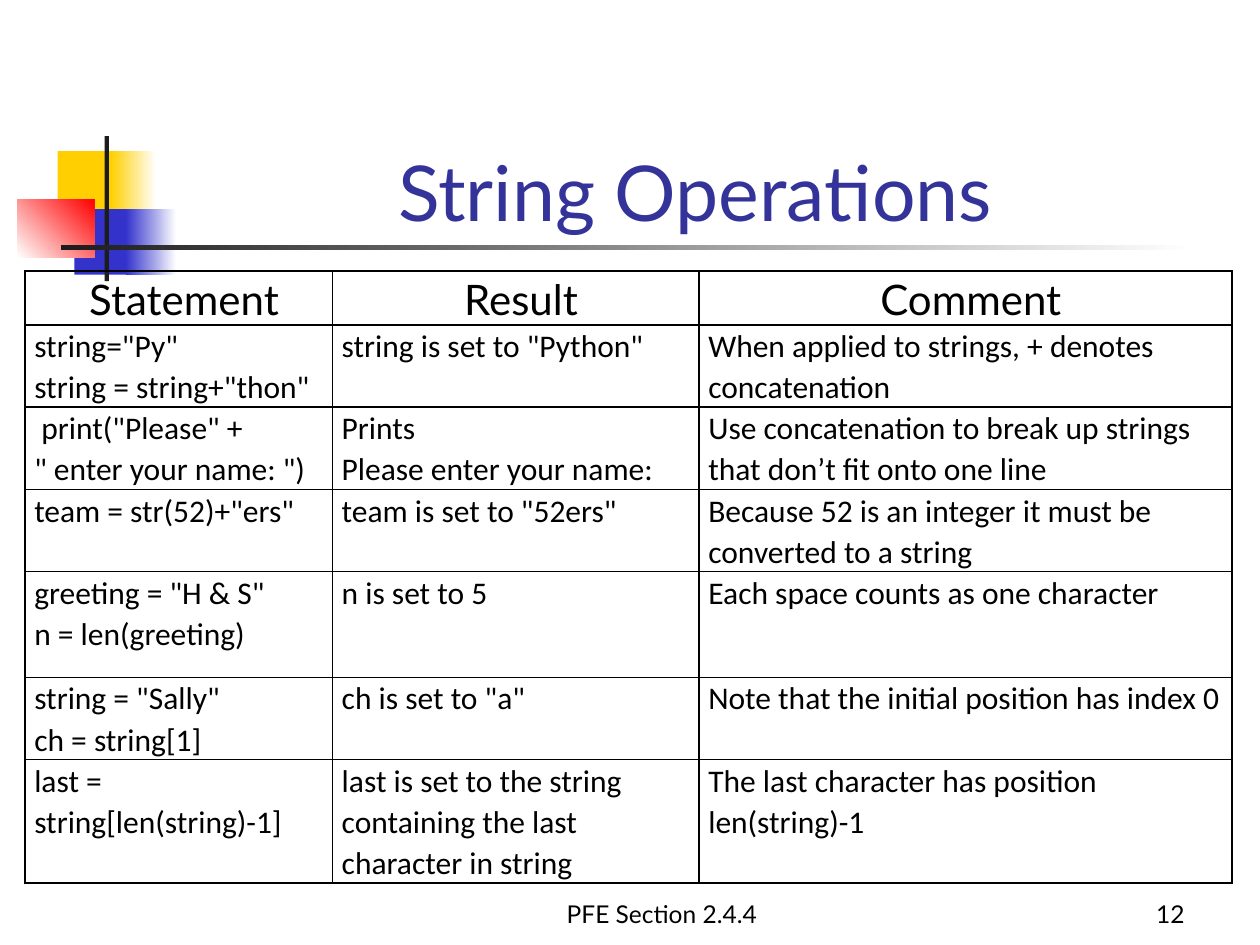
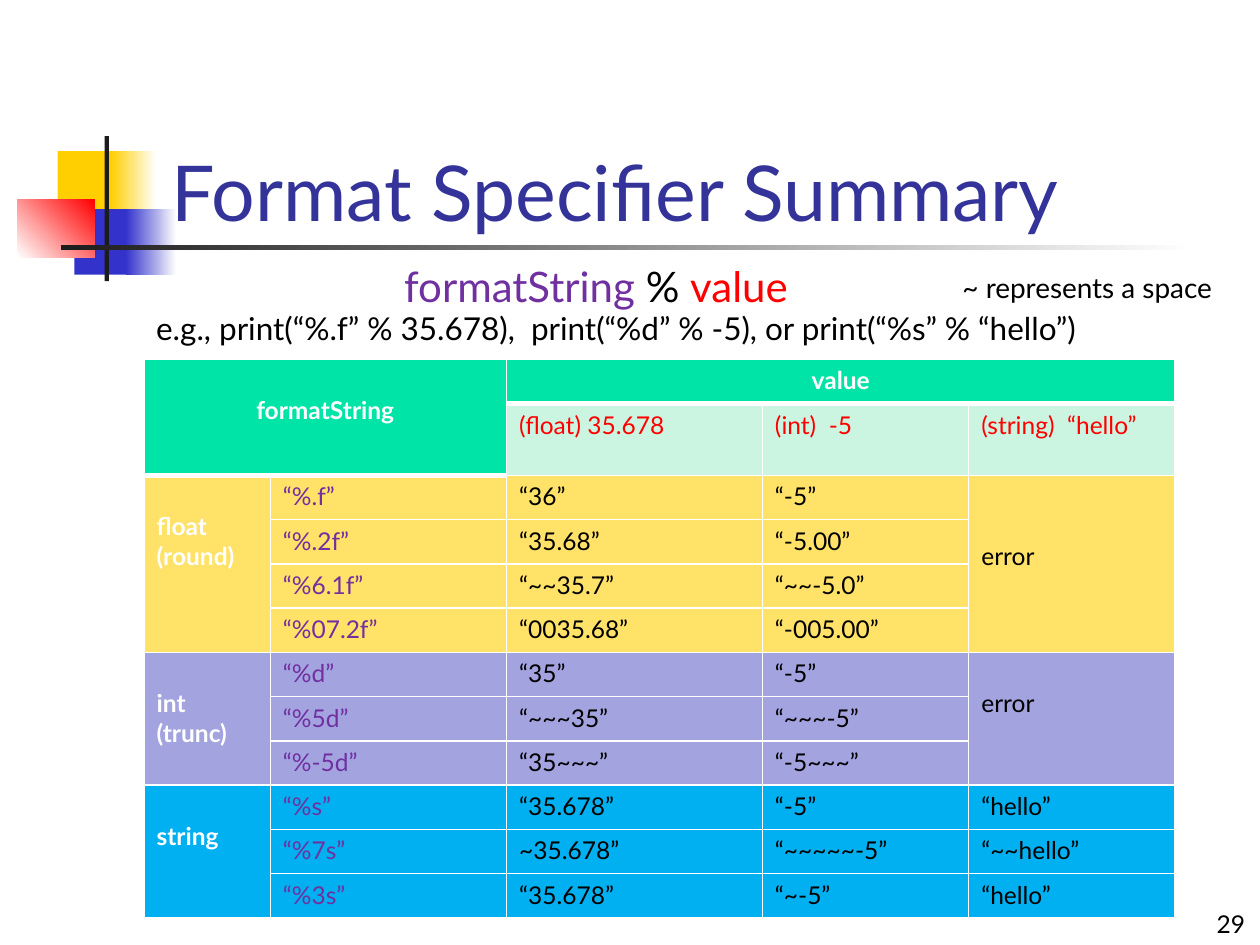
"""Build two slides on string operations and format specifiers."""
from lxml.etree import SubElement
from pptx import Presentation
from pptx.dml.color import RGBColor as Rgb
from pptx.enum.shapes import MSO_SHAPE as Shape
from pptx.enum.text import MSO_ANCHOR as Anchor, MSO_AUTO_SIZE as AutoSize, PP_ALIGN as Align
from pptx.oxml.ns import qn
from pptx.util import Pt

COLORS = {
    "title": "333399", "text": "000000", "white": "FFFFFF", "bar": "1C1C1C",
    "yellow": "FFCF01", "blue": "3333CC", "red": "FF0000", "purple": "7030A0",
    "header": "00E4A8", "subheader": "CCF5E1",
    "float": "FFE267", "int": "A3A3E0", "string": "00B0F0",
}
LATO, CALIBRI = "Lato", "Calibri"
LINE = 17

DECORATION = [
    (33, 86.4, 34.6, 37.4, ["yellow"], 0),
    (63.4, 86.4, 25.9, 37.4, ["yellow", "white"], 0),
    (42.5, 119.5, 33.1, 37.4, ["blue"], 0),
    (72, 119.5, 28.8, 37.4, ["blue", "white"], 0),
    (10, 113.8, 44, 33.1, ["white", "red"], 45),
    (59.8, 77.8, 2.4, 82.8, ["bar"], 0),
    (34.6, 140.2, 648, 2.5, ["bar", "white"], 0),
]

OPERATIONS = [
    (" Statement", " Result", " Comment"),
    ('string="Py"\nstring = string+"thon"', 'string is set to "Python"',
     "When applied to strings, + denotes concatenation"),
    (' print("Please" +\n" enter your name: ")', "Prints\nPlease enter your name:",
     "Use concatenation to break up strings that don’t fit onto one line"),
    ('team = str(52)+"ers"', 'team is set to "52ers"',
     "Because 52 is an integer it must be converted to a string"),
    ('greeting = "H & S"\nn = len(greeting)', "n is set to 5",
     "Each space counts as one character"),
    ('string = "Sally"\nch = string[1]', 'ch is set to "a"',
     "Note that the initial position has index 0"),
    ("last = string[len(string)-1]",
     "last is set to the string containing the last character in string",
     "The last character has position len(string)-1"),
]
OPERATION_WIDTHS = [175.7, 209.5, 304.6]
OPERATION_HEIGHTS = [30.8, 47, 47, 47, 60.4, 47, 70.5]

ARGUMENTS = ["(float) 35.678", "(int)  -5", "(string)  “hello”"]
SPECIFIERS = [
    ("float", "float\n(round)", 2, [
        ("“%.f”", "“36”", "“-5”"),
        ("“%.2f”", "“35.68”", "“-5.00”"),
        ("“%6.1f”", "“~~35.7”", "“~~-5.0”"),
        ("“%07.2f”", "“0035.68”", "“-005.00”")]),
    ("int", "int\n(trunc)", 1, [
        ("“%d”", "“35”", "“-5”"),
        ("“%5d”", "“~~~35”", "“~~~-5”"),
        ("“%-5d”", "“35~~~”", "“-5~~~”")]),
    ("string", "string", 0, [
        ("“%s”", "“35.678”", "“-5”", "“hello”"),
        ("“%7s”", "~35.678”", "“~~~~~-5”", "“~~hello”"),
        ("“%3s”", "“35.678”", "“~-5”", "“hello”")]),
]
SPECIFIER_WIDTHS = [72.2, 135, 146.2, 117.9, 117.9]
SPECIFIER_HEIGHTS = [25.3, 40.8] + [25.3] * 10


def rgb(name):
    return Rgb.from_string(COLORS[name])


def style(font, size, color="text", bold=False, face=LATO):
    font.size, font.name, font.bold = Pt(size), face, bold
    font.color.rgb = rgb(color)


def write(frame, text, size, color="text", align=Align.LEFT, bold=False, face=LATO, spacing=1):
    frame.text = text
    for paragraph in frame.paragraphs:
        paragraph.alignment, paragraph.line_spacing = align, spacing
        for font in [paragraph.font] + [run.font for run in paragraph.runs]:
            style(font, size, color, bold, face)


def place(item, left, top, width, height):
    item.left, item.top, item.width, item.height = map(Pt, (left, top, width, height))


def add_decoration(slide):
    for left, top, width, height, colors, angle in DECORATION:
        block = slide.shapes.add_shape(
            Shape.RECTANGLE, Pt(left), Pt(top), Pt(width), Pt(height))
        block.shadow.inherit = False
        block.line.fill.background()
        if len(colors) == 1:
            block.fill.solid()
            block.fill.fore_color.rgb = rgb(colors[0])
            continue
        block.fill.gradient()
        block.fill.gradient_angle = angle
        for stop, color in zip(block.fill.gradient_stops, colors):
            stop.color.rgb = rgb(color)


def add_titled_slide(deck, title, align):
    slide = deck.slides.add_slide(deck.slide_layouts[5])
    add_decoration(slide)
    heading = slide.shapes.title
    place(heading, 90.7, 49, 613.4, 90)
    frame = heading.text_frame
    frame.auto_size, frame.vertical_anchor = AutoSize.NONE, Anchor.BOTTOM
    write(frame, title, 44, "title", align)
    return slide


def add_footer(slide, text, left, top, width, align):
    footer = slide.shapes.add_textbox(Pt(left), Pt(top), Pt(width), Pt(36)).text_frame
    footer.word_wrap, footer.vertical_anchor = True, Anchor.BOTTOM
    write(footer, text, 14, align=align)


def add_label(slide, text, left, top, width, height, size):
    label = slide.shapes.add_textbox(Pt(left), Pt(top), Pt(width), Pt(height)).text_frame
    label.word_wrap, label.auto_size = False, AutoSize.SHAPE_TO_FIT_TEXT
    write(label, text, size)
    return label


def add_grid(slide, left, top, widths, heights):
    frame = slide.shapes.add_table(
        len(heights), len(widths), Pt(left), Pt(top), Pt(sum(widths)), Pt(sum(heights)))
    grid = frame.table
    grid.first_row = grid.horz_banding = False
    for column, width in zip(grid.columns, widths):
        column.width = Pt(width)
    for row, height in zip(grid.rows, heights):
        row.height = Pt(height)
    return grid


def set_borders(cell, color, bottom=1):
    properties = cell._tc.get_or_add_tcPr()
    for side, width in (("L", 1), ("R", 1), ("T", 1), ("B", bottom)):
        line = SubElement(properties, qn(f"a:ln{side}"), w=str(Pt(width)))
        fill = SubElement(line, qn("a:solidFill"))
        SubElement(fill, qn("a:srgbClr"), val=COLORS[color])


def paint(cell, color):
    cell.fill.solid()
    cell.fill.fore_color.rgb = rgb(color)


def write_cell(cell, text, color="text", lines_above=0, **look):
    cell.margin_top = Pt(3.6 + LINE * lines_above)
    write(cell.text_frame, text, 14, color, **look)


def add_operations(slide):
    grid = add_grid(slide, 14.2, 154.8, OPERATION_WIDTHS, OPERATION_HEIGHTS)
    for row, texts in enumerate(OPERATIONS):
        size, face, align = (18, CALIBRI, Align.LEFT) if row else (24, LATO, Align.CENTER)
        for column, text in enumerate(texts):
            cell = grid.cell(row, column)
            set_borders(cell, "text")
            cell.fill.background()
            cell.margin_left = cell.margin_right = Pt(5.4)
            cell.margin_top = cell.margin_bottom = 0
            write(cell.text_frame, text, size, align=align, face=face, spacing=1.07)


def add_specifier_header(grid):
    for row in range(2):
        for column in range(5):
            cell = grid.cell(row, column)
            thick = row == 0 or column < 2
            set_borders(cell, "white", 3 if thick else 1)
            paint(cell, "header" if thick else "subheader")
    grid.cell(0, 0).merge(grid.cell(1, 1))
    grid.cell(0, 2).merge(grid.cell(0, 4))
    write_cell(grid.cell(0, 0), "formatString", "white", 1, align=Align.CENTER, bold=True)
    write_cell(grid.cell(0, 2), "value", "white", align=Align.CENTER, bold=True)
    for column, argument in enumerate(ARGUMENTS, 2):
        write_cell(grid.cell(1, column), argument, "red")


def add_specifiers(slide):
    grid = add_grid(slide, 82.3, 205.4, SPECIFIER_WIDTHS, SPECIFIER_HEIGHTS)
    add_specifier_header(grid)
    first = 2
    for kind, label, error_lines, results in SPECIFIERS:
        last = first + len(results) - 1
        for row, texts in enumerate(results, first):
            for column in range(5):
                set_borders(grid.cell(row, column), "white")
                paint(grid.cell(row, column), kind)
            for column, text in enumerate(texts, 1):
                write_cell(grid.cell(row, column), text, "purple" if column == 1 else "text")
        grid.cell(first, 0).merge(grid.cell(last, 0))
        write_cell(grid.cell(first, 0), label, "white", 1, bold=True)
        if error_lines:
            grid.cell(first, 4).merge(grid.cell(last, 4))
            write_cell(grid.cell(first, 4), "error", lines_above=error_lines)
        first = last + 1


def add_syntax(slide):
    syntax = add_label(slide, "", 223.9, 145.4, 242.6, 36.7, 24).paragraphs[0]
    for text, color in (("formatString", "purple"), (" % ", "text"), ("value", "red")):
        part = syntax.add_run()
        part.text = text
        style(part.font, 24, color)


def main():
    deck = Presentation()
    deck.slide_width, deck.slide_height = Pt(720), Pt(540)

    operations = add_titled_slide(deck, "String Operations", Align.CENTER)
    add_footer(operations, "PFE Section 2.4.4", 264.2, 498.2, 228.2, Align.CENTER)
    add_footer(operations, "12", 534.2, 498.2, 149.8, Align.RIGHT)
    add_operations(operations)

    summary = add_titled_slide(deck, "Format Specifier Summary", Align.LEFT)
    add_specifiers(summary)
    add_footer(summary, "29", 568.8, 504, 149.8, Align.RIGHT)
    add_syntax(summary)
    add_label(summary, "e.g., print(“%.f” % 35.678),  print(“%d” % -5), or print(“%s” % “hello”)",
              82.1, 173.2, 603.4, 28.8, 18)
    add_label(summary, "~ represents a space", 542.9, 150.8, 164.9, 26.6, 16)
    deck.save("out.pptx")


if __name__ == "__main__":
    main()
